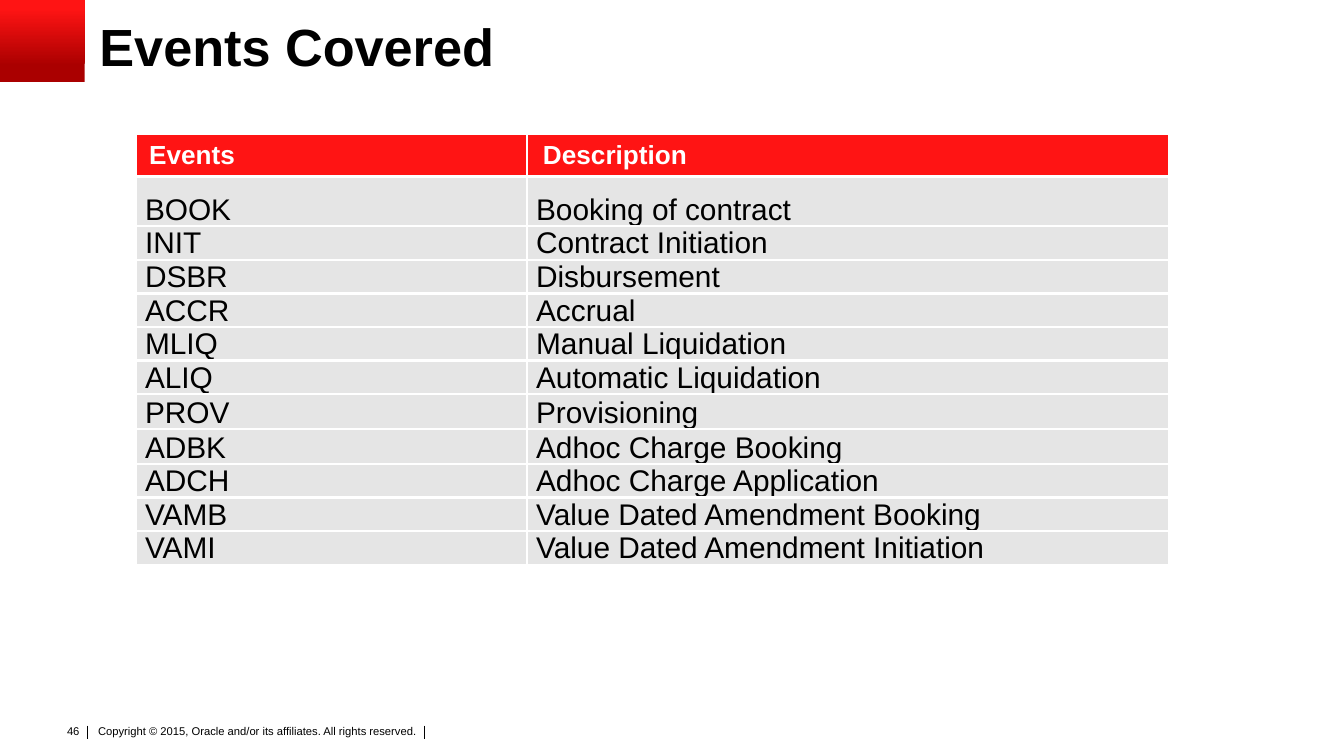
from lxml import etree
from pptx import Presentation
from pptx.dml.color import RGBColor
from pptx.enum import shapes, text
from pptx.oxml import parse_xml
from pptx.oxml.ns import nsdecls, qn
from pptx.util import Inches, Pt

BLACK = RGBColor(0x00, 0x00, 0x00)
WHITE = RGBColor(0xFF, 0xFF, 0xFF)
RED = RGBColor(0xFF, 0x14, 0x14)
DARK_RED = RGBColor(0xAA, 0x00, 0x00)
GREY = RGBColor(0xE5, 0xE5, 0xE5)

EVENTS = [
    ("BOOK", "Booking of contract"),
    ("INIT", "Contract Initiation"),
    ("DSBR", "Disbursement"),
    ("ACCR", "Accrual"),
    ("MLIQ", "Manual Liquidation"),
    ("ALIQ", "Automatic Liquidation"),
    ("PROV", "Provisioning"),
    ("ADBK", "Adhoc Charge Booking"),
    ("ADCH", "Adhoc Charge Application"),
    ("VAMB", "Value Dated Amendment Booking"),
    ("VAMI", "Value Dated Amendment Initiation"),
]
COLUMN_WIDTHS = [2.91, 4.78]
HEADER_HEIGHT = 0.31
ROW_HEIGHT = 0.25
TALLER_ROWS = {"BOOK": 0.37, "PROV": 0.26, "ADBK": 0.26}


def style_text(paragraph, size, color=BLACK, bold=False):
    for run in paragraph.runs:
        run.font.name = "Arial"
        run.font.size = Pt(size)
        run.font.bold = bold
        run.font.color.rgb = color


def set_margins(holder, horizontal, vertical):
    holder.margin_left = holder.margin_right = Inches(horizontal)
    holder.margin_top = holder.margin_bottom = Inches(vertical)


def add_label(slide, words, left, top, width, height, size, bold=False,
              margins=(0, 0), wrap=True):
    box = slide.shapes.add_textbox(
        Inches(left), Inches(top), Inches(width), Inches(height))
    frame = box.text_frame
    frame.word_wrap = wrap
    set_margins(frame, *margins)
    frame.text = words
    style_text(frame.paragraphs[0], size, bold=bold)
    return frame


def add_title(slide):
    frame = add_label(slide, "Events Covered", 0.74, 0.15, 9, 0.44, 28, bold=True)
    frame.vertical_anchor = text.MSO_ANCHOR.MIDDLE
    frame.paragraphs[0].line_spacing = 0.9


def add_corner_block(slide):
    block = slide.shapes.add_shape(
        shapes.MSO_SHAPE.RECTANGLE, 0, 0, Inches(0.63), Inches(0.61))
    block.shadow.inherit = False
    block.line.fill.background()
    block.fill.gradient()
    block.fill.gradient_angle = 90
    stops = [(0.2, DARK_RED), (0.9, RED)]
    for stop, (position, color) in zip(block.fill.gradient_stops, stops):
        stop.position = position
        stop.color.rgb = color


def add_divider(slide, x):
    divider = slide.shapes.add_connector(
        shapes.MSO_CONNECTOR.STRAIGHT,
        Inches(x), Inches(5.4), Inches(x), Inches(5.5))
    divider.line.color.rgb = BLACK
    divider.line.width = Pt(0.5)
    etree.SubElement(divider._element.spPr, qn("a:effectLst"))


def add_footer(slide):
    add_label(
        slide,
        "Copyright © 2015, Oracle and/or its affiliates. All rights reserved.",
        0.69, 5.37, 2.74, 0.24, 6, margins=(0.04, 0.02))
    for x in (0.65, 3.16):
        add_divider(slide, x)
    page = add_label(slide, "46", 0.39, 5.34, 0.3, 0.2, 6,
                     margins=(0.1, 0.05), wrap=False)
    page.paragraphs[0].alignment = text.PP_ALIGN.RIGHT


def set_borders(cell, sides):
    """Draw white rules on the given sides, ahead of the fill."""
    properties = cell._tc.get_or_add_tcPr()
    for index, side in enumerate(sides):
        properties.insert(index, parse_xml(
            f'<a:ln{side} {nsdecls("a")} w="{Pt(1.5)}"><a:solidFill>'
            f'<a:srgbClr val="{WHITE}"/></a:solidFill></a:ln{side}>'))


def fill_cell(cell, words, is_header, is_first_column):
    cell.text = words
    cell.fill.solid()
    cell.fill.fore_color.rgb = RED if is_header else GREY
    set_borders(cell, ("R" if is_first_column else "L")
                + ("B" if is_header else "TB"))
    paragraph = cell.text_frame.paragraphs[0]
    if is_header:
        set_margins(cell, 0.1, 0.04)
        cell.vertical_anchor = text.MSO_ANCHOR.MIDDLE
        style_text(paragraph, 14, WHITE, bold=True)
    else:
        set_margins(cell, 0.07, 0)
        cell.vertical_anchor = text.MSO_ANCHOR.BOTTOM
        paragraph.line_spacing = 0.9
        style_text(paragraph, 16)


def add_events_table(slide):
    heights = [HEADER_HEIGHT] + [
        TALLER_ROWS.get(code, ROW_HEIGHT) for code, _ in EVENTS]
    table = slide.shapes.add_table(
        len(heights), len(COLUMN_WIDTHS), Inches(1.01), Inches(1),
        Inches(sum(COLUMN_WIDTHS)), Inches(sum(heights))).table
    for column, width in zip(table.columns, COLUMN_WIDTHS):
        column.width = Inches(width)
    for row, height in zip(table.rows, heights):
        row.height = Inches(height)
    for r, entries in enumerate([("Events", "Description")] + EVENTS):
        for c, words in enumerate(entries):
            fill_cell(table.cell(r, c), words, r == 0, c == 0)
    description = table.cell(0, 1).text_frame.paragraphs[0]
    description._p.get_or_add_pPr().set("marL", str(Inches(0.02)))


def main():
    deck = Presentation()
    deck.slide_width = Inches(10)
    deck.slide_height = deck.slide_width * 9 // 16
    slide = deck.slides.add_slide(deck.slide_layouts[6])
    add_footer(slide)
    add_corner_block(slide)
    add_title(slide)
    add_events_table(slide)
    deck.save("out.pptx")


if __name__ == "__main__":
    main()
